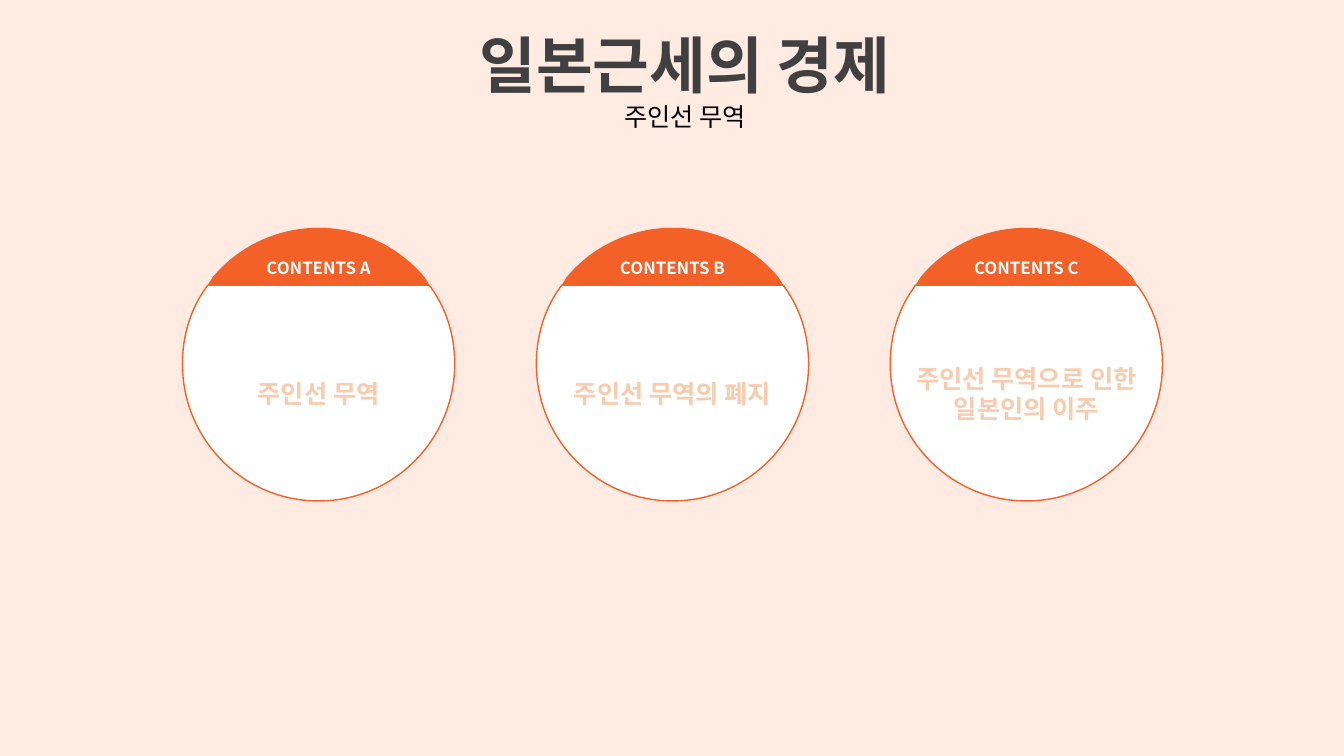
"""Build a slide with three capped circles on early modern Japanese trade."""
from lxml import etree
from pptx import Presentation
from pptx import util as u
from pptx.dml.color import RGBColor
from pptx.enum import text
from pptx.oxml import ns

PX = 9144
FONT = "Noto Sans CJK KR"
COLORS = {
    "background": "FFEBE2",
    "title": "404040",
    "subtitle": "000000",
    "orange": "F46128",
    "white": "FFFFFF",
    "peach": "F8CBAD",
    "outline": "ED7D31",
}
CENTER_X, CENTER_Y, PITCH = 316, 361, 351
CAP = [
    [(0, -135)],
    [(42, -135), (80, -116), (105, -86)],
    [(110, -78)],
    [(-110, -78)],
    [(-105, -86)],
    [(-80, -116), (-42, -135), (0, -135)],
]
BODY = [
    [(-110, -78)],
    [(110, -78)],
    [(112, -75)],
    [(127, -54), (135, -28), (135, 0)],
    [(135, 75), (75, 136), (0, 136)],
    [(-75, 136), (-135, 75), (-135, 0)],
    [(-135, -28), (-127, -54), (-112, -75)],
    [(-110, -78)],
]
CIRCLES = [
    ("CONTENTS A", ["주인선 무역"]),
    ("CONTENTS B", ["주인선 무역의 폐지"]),
    ("CONTENTS C", ["주인선 무역으로 인한", "일본인의 이주"]),
]


def write(shape, lines):
    shape.text_frame.text = "\n".join(line[0] for line in lines)
    for paragraph, (_, size, color, bold) in zip(shape.text_frame.paragraphs, lines):
        paragraph.alignment = text.PP_ALIGN.CENTER
        font = paragraph.runs[0].font
        font.size, font.bold, font.name = u.Pt(size), bold, FONT
        font.color.rgb = RGBColor.from_string(COLORS[color])
        properties = paragraph.runs[0]._r.get_or_add_rPr()
        etree.SubElement(properties, ns.qn("a:ea"), typeface=FONT)


def add_segment(slide, center_x, pieces, fill):
    points = [(center_x + x, CENTER_Y + y) for piece in pieces for x, y in piece]
    builder = slide.shapes.build_freeform(*points[0], scale=PX)
    builder.add_line_segments(points[1:], close=True)
    segment = builder.convert_to_shape()
    steps = iter(list(segment._element.iter(ns.qn("a:lnTo"))))
    for piece in pieces[1:]:
        group = [next(steps) for _ in piece]
        if len(group) == 3:
            curve = etree.Element(ns.qn("a:cubicBezTo"))
            group[0].addprevious(curve)
            for step in group:
                curve.append(step[0])
                step.getparent().remove(step)
    segment.shadow.inherit = False
    segment.fill.solid()
    segment.fill.fore_color.rgb = RGBColor.from_string(COLORS[fill])
    segment.line.fill.background()
    return segment


presentation = Presentation()
presentation.slide_width = 1333 * PX
presentation.slide_height = 750 * PX
slide = presentation.slides.add_slide(presentation.slide_layouts[6])
slide.background.fill.solid()
slide.background.fill.fore_color.rgb = RGBColor.from_string(COLORS["background"])

heading = slide.shapes.add_textbox(438 * PX, 22 * PX, 483 * PX, 188 * PX)
heading.text_frame.word_wrap = False
write(heading, [
    ("일본근세의 경제", 44, "title", True),
    ("주인선 무역", 18, "subtitle", False),
])

for index, (label, topic) in enumerate(CIRCLES):
    center_x = CENTER_X + index * PITCH
    add_segment(slide, center_x, CAP, "orange")

    body = add_segment(slide, center_x, BODY, "white")
    body.line.color.rgb = RGBColor.from_string(COLORS["orange"])
    body.line.width = u.Pt(1)
    body.text_frame.word_wrap = True
    body.text_frame.vertical_anchor = text.MSO_ANCHOR.MIDDLE
    write(body, [(line, 18, "peach", True) for line in topic])
    for paragraph in body.text_frame.paragraphs:
        outline = etree.Element(ns.qn("a:ln"), w=str(u.Pt(1.75)))
        fill = etree.SubElement(outline, ns.qn("a:solidFill"))
        etree.SubElement(fill, ns.qn("a:srgbClr"), val=COLORS["outline"])
        paragraph.runs[0]._r.get_or_add_rPr().insert(0, outline)

    caption = slide.shapes.add_textbox((center_x - 63) * PX, 241 * PX, 126 * PX, 36 * PX)
    caption.text_frame.word_wrap = False
    write(caption, [(label, 12, "white", True)])
    caption.text_frame.paragraphs[0].line_spacing = 1.5

presentation.save("out.pptx")
